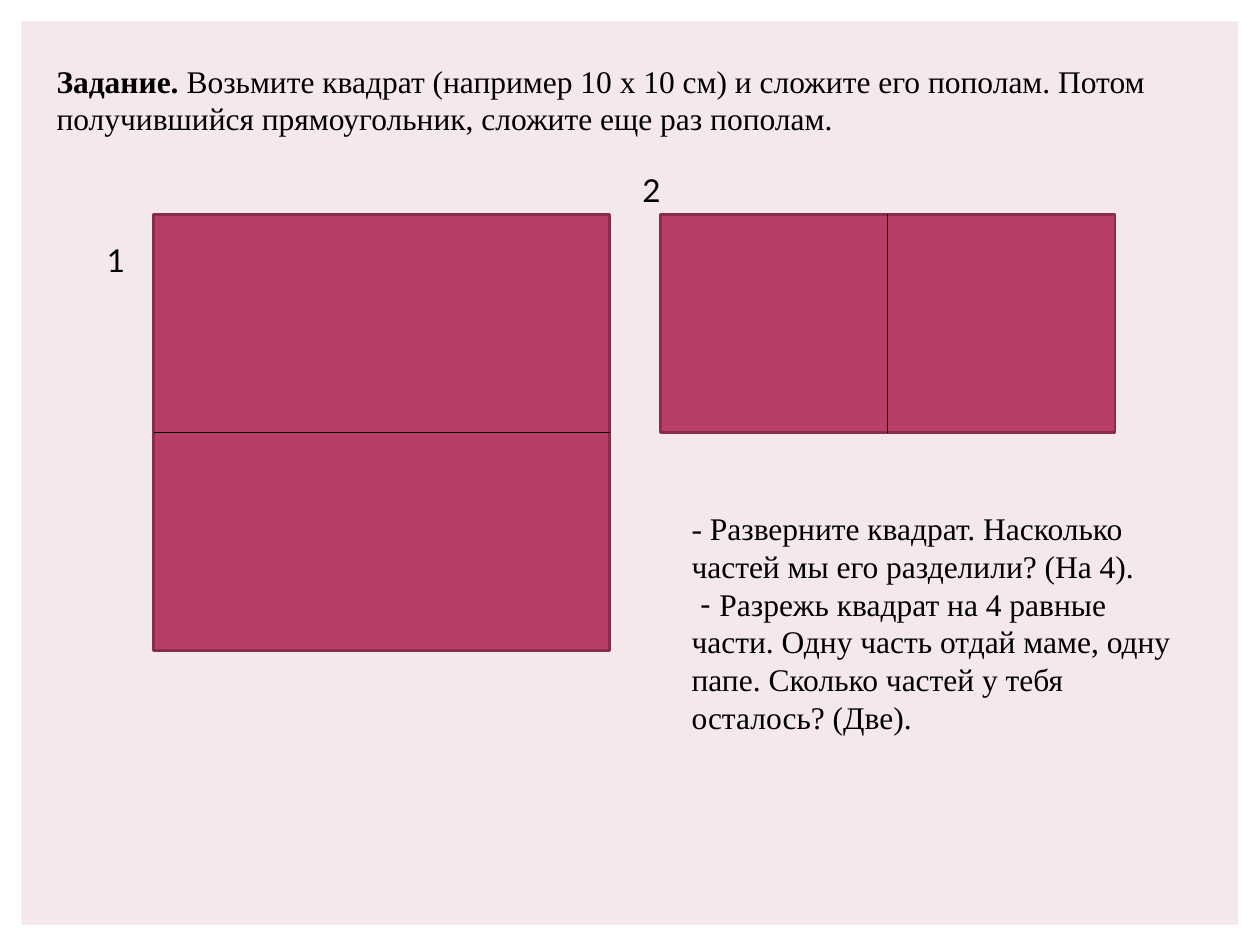
from pptx import Presentation
from pptx.dml.color import RGBColor
from pptx.enum.shapes import MSO_CONNECTOR, MSO_SHAPE
from pptx.enum.text import MSO_AUTO_SIZE
from pptx.oxml.ns import qn
from pptx.util import Inches, Pt
from lxml import etree

RECTANGLE = MSO_SHAPE.RECTANGLE
STRAIGHT = MSO_CONNECTOR.STRAIGHT
GROW = MSO_AUTO_SIZE.SHAPE_TO_FIT_TEXT
WIDTH, HEIGHT = Inches(10), Inches(7.5)
SERIF, SANS = "Times New Roman", "Lato"
PANEL, PAPER, EDGE, INK = "F4E7ED", "B83D68", "882D4D", "000000"


def color(value):
    return RGBColor.from_string(value)


def place(box):
    left, top, width, height = box
    return [round(share * side / 100) for share, side in
            ((left, WIDTH), (top, HEIGHT), (width, WIDTH), (height, HEIGHT))]


def add_sheet(slide, box, fill, edge=None):
    sheet = slide.shapes.add_shape(RECTANGLE, *place(box))
    sheet.shadow.inherit = False
    sheet.fill.solid()
    sheet.fill.fore_color.rgb = color(fill)
    if edge:
        sheet.line.color.rgb = color(edge)
        sheet.line.width = Pt(1.5)
    else:
        sheet.line.fill.background()


def add_text(slide, box, paragraphs, wrap=True):
    frame = slide.shapes.add_textbox(*place(box)).text_frame
    frame.word_wrap = wrap
    frame.auto_size = GROW
    for index, pieces in enumerate(paragraphs):
        paragraph = frame.add_paragraph() if index else frame.paragraphs[0]
        for words, font, bold in pieces:
            run = paragraph.add_run()
            run.text = words
            run.font.name = font
            run.font.size = Pt(18)
            run.font.bold = bold
            run.font.color.rgb = color(INK)


def add_folded_sheet(slide, box, vertical):
    add_sheet(slide, box, PAPER, EDGE)
    left, top, width, height = place(box)
    if vertical:
        ends = left + width // 2, top, left + width // 2, top + height
    else:
        ends = left, top + height // 2, left + width, top + height // 2
    fold = slide.shapes.add_connector(STRAIGHT, *ends)
    fold.line.color.rgb = color(INK)
    fold.line.width = Pt(0.79)
    etree.SubElement(fold._element.spPr, qn("a:effectLst"))


def add_step_number(slide, left, top, number):
    add_text(slide, (left, top, 3.5, 5.33), [[(number, SANS, False)]], wrap=False)


def add_task(slide, box):
    add_text(slide, box, [[
        ("Задание. ", SERIF, True),
        ("Возьмите квадрат (например 10 x 10 см) и сложите его пополам. "
         "Потом получившийся прямоугольник, сложите еще раз пополам.", SERIF, False),
    ]])


def add_questions(slide, box):
    add_text(slide, box, [
        [("- Разверните квадрат. Насколько частей мы его разделили? (На 4).",
          SERIF, False)],
        [(" - ", SANS, False),
         ("Разрежь квадрат на 4 равные части. Одну часть отдай маме, одну папе. "
          "Сколько частей у тебя осталось? (Две).", SERIF, False)],
    ])


def main():
    deck = Presentation()
    deck.slide_width, deck.slide_height = WIDTH, HEIGHT
    slide = deck.slides.add_slide(deck.slide_layouts[6])
    top, square_height = 22.67, 46.2
    add_sheet(slide, (1.7, 2.27, 96.6, 95.6), PANEL)
    add_task(slide, (3.5, 5.87, 92.9, 9.47))
    add_folded_sheet(slide, (12.2, top, 36.2, square_height), vertical=False)
    add_folded_sheet(slide, (52.4, top, 36.1, square_height / 2), vertical=True)
    add_questions(slide, (53.9, 53.2, 40.9, 25.6))
    add_step_number(slide, 7.5, 24.8, "1")
    add_step_number(slide, 50, 17.47, "2")
    deck.save("out.pptx")


if __name__ == "__main__":
    main()
